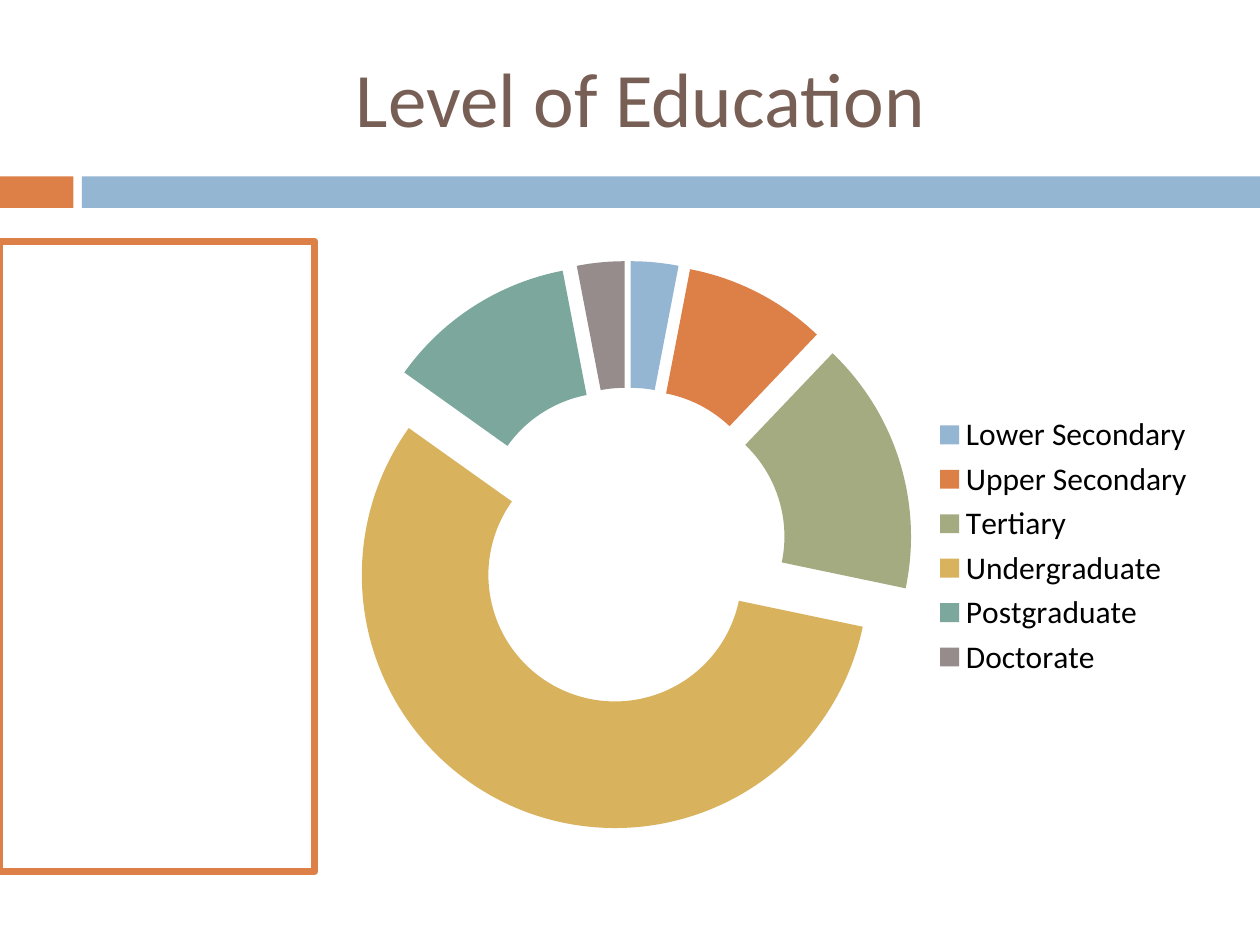
from pptx import Presentation
from pptx.chart.data import CategoryChartData
from pptx.dml.color import RGBColor
from pptx.enum import chart as ch, shapes, text
from pptx.util import Pt

FONT = "Calibri"
HEX = {"white": "FFFFFF", "black": "000000", "brown": "775F55",
       "blue": "94B6D2", "orange": "DD8047", "green": "A5AB81",
       "gold": "D8B25C", "teal": "7BA79D", "gray": "968C8C"}
TITLE = "Level of Education"
LEVELS = [("Lower Secondary", 3, "blue"),
          ("Upper Secondary", 9, "orange"),
          ("Tertiary", 16, "green"),
          ("Undergraduate", 56, "gold"),
          ("Postgraduate", 12, "teal"),
          ("Doctorate", 3, "gray")]
WIDE, HIGH = 720, 540
BAR_TOP, BAR_HIGH, TAB, GAP = 100.8, 18, 42, 4.8
TOP = 138


def rgb(name):
    return RGBColor.from_string(HEX[name])


def style(font, size, color):
    font.name, font.size = FONT, Pt(size)
    font.color.rgb = rgb(color)


def rect(slide, box, fill, line=None):
    shape = slide.shapes.add_shape(shapes.MSO_SHAPE.RECTANGLE, *map(Pt, box))
    shape.shadow.inherit = False
    shape.fill.solid()
    shape.fill.fore_color.rgb = rgb(fill)
    if line:
        shape.line.color.rgb = rgb(line)
        shape.line.width = Pt(4)
    else:
        shape.line.fill.background()


def title(slide):
    frame = slide.shapes.add_textbox(*map(Pt, (48, 21.6, 636, 67.2))).text_frame
    frame.word_wrap = True
    frame.vertical_anchor = text.MSO_ANCHOR.MIDDLE
    frame.text = TITLE
    para = frame.paragraphs[0]
    para.alignment = text.PP_ALIGN.CENTER
    style(para.runs[0].font, 44, "brown")


def ring(slide):
    names, vals, tints = zip(*LEVELS)
    data = CategoryChartData()
    data.categories = names
    data.add_series("Series 1", vals)
    box = map(Pt, (186, TOP, 504, 348))
    chart = slide.shapes.add_chart(
        ch.XL_CHART_TYPE.DOUGHNUT_EXPLODED, *box, data).chart
    style(chart.font, 18, "black")
    chart.has_title = False
    chart.has_legend = True
    chart.legend.position = ch.XL_LEGEND_POSITION.RIGHT
    chart.legend.include_in_layout = False
    plot = chart.plots[0]
    plot.vary_by_categories = True
    for i, tint in enumerate(tints):
        fill = plot.series[0].points[i].format.fill
        fill.solid()
        fill.fore_color.rgb = rgb(tint)


def main():
    deck = Presentation()
    deck.slide_width, deck.slide_height = Pt(WIDE), Pt(HIGH)
    slide = deck.slides.add_slide(deck.slide_layouts[6])
    left = TAB + GAP
    rect(slide, (0, BAR_TOP, TAB, BAR_HIGH), "orange")
    rect(slide, (left, BAR_TOP, WIDE - left, BAR_HIGH), "blue")
    title(slide)
    rect(slide, (0, TOP, 180, 360), "white", "orange")
    ring(slide)
    deck.save("out.pptx")


if __name__ == "__main__":
    main()
